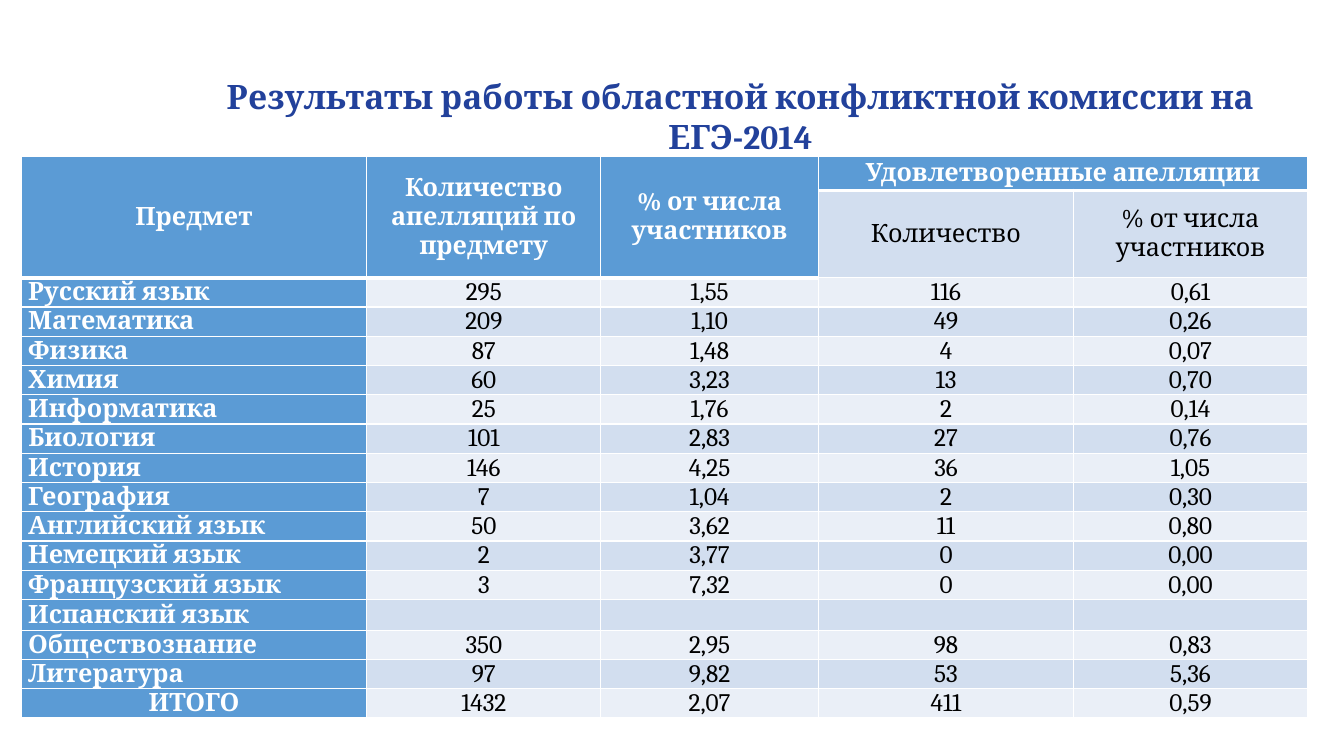
from dataclasses import dataclass

from lxml.etree import SubElement
from pptx import Presentation
from pptx.dml.color import RGBColor
from pptx.enum.text import MSO_ANCHOR, MSO_AUTO_SIZE, PP_ALIGN
from pptx.oxml.ns import qn
from pptx.util import Emu, Inches, Pt

SLIDE_WIDTH, SLIDE_HEIGHT = Inches(13.33), Inches(7.5)
FONT = "Cambria"

WHITE = RGBColor(0xFF, 0xFF, 0xFF)
BLACK = RGBColor(0x00, 0x00, 0x00)
NAVY = RGBColor(0x22, 0x41, 0x9B)
BLUE = RGBColor(0x5B, 0x9B, 0xD5)
BAND_DARK = RGBColor(0xD2, 0xDE, 0xEF)
BAND_LIGHT = RGBColor(0xEA, 0xEF, 0xF7)

# Column widths are percentages of the slide width, row heights of its height
COLUMN_SHARES = (25.73, 17.4, 16.2, 18.98, 17.4)
HEADER_SHARES = (4.53, 7.33)
ROW_SHARE = 3.87


@dataclass(frozen=True)
class CellStyle:
    fill: RGBColor
    color: RGBColor = BLACK
    bold: bool = False
    align: PP_ALIGN = PP_ALIGN.CENTER
    bottom_line: float = 1


@dataclass(frozen=True)
class Subject:
    name: str
    values: tuple[str, ...] = ("", "", "", "")
    align: PP_ALIGN = PP_ALIGN.LEFT


HEADER = CellStyle(BLUE, WHITE, True, bottom_line=3)
SUBHEADER = CellStyle(BAND_DARK)

HEADINGS = (
    ("Предмет", "Количество апелляций по предмету", "% от числа участников",
     "Удовлетворенные апелляции", ""),
    ("", "", "", "Количество", "% от числа участников"),
)
SUBJECTS = (
    Subject("Русский язык", ("295", "1,55", "116", "0,61")),
    Subject("Математика", ("209", "1,10", "49", "0,26")),
    Subject("Физика", ("87", "1,48", "4", "0,07")),
    Subject("Химия", ("60", "3,23", "13", "0,70")),
    Subject("Информатика", ("25", "1,76", "2", "0,14")),
    Subject("Биология", ("101", "2,83", "27", "0,76")),
    Subject("История", ("146", "4,25", "36", "1,05")),
    Subject("География", ("7", "1,04", "2", "0,30")),
    Subject("Английский язык", ("50", "3,62", "11", "0,80")),
    Subject("Немецкий язык", ("2", "3,77", "0", "0,00")),
    Subject("Французский язык", ("3", "7,32", "0", "0,00")),
    Subject("Испанский язык"),
    Subject("Обществознание", ("350", "2,95", "98", "0,83")),
    Subject("Литература", ("97", "9,82", "53", "5,36")),
    Subject("ИТОГО", ("1432", "2,07", "411", "0,59"), PP_ALIGN.CENTER),
)


def across(percent: float) -> Emu:
    return Emu(round(SLIDE_WIDTH * percent / 100))


def down(percent: float) -> Emu:
    return Emu(round(SLIDE_HEIGHT * percent / 100))


def format_text(text_frame, size: float, color: RGBColor, bold: bool, align: PP_ALIGN) -> None:
    for paragraph in text_frame.paragraphs:
        paragraph.alignment = align
        for run in paragraph.runs:
            run.font.name = FONT
            run.font.size = Pt(size)
            run.font.bold = bold
            run.font.color.rgb = color


def add_borders(cell, bottom_line: float) -> None:
    properties = cell._tc.get_or_add_tcPr()
    widths = {"a:lnL": 1, "a:lnR": 1, "a:lnT": 1, "a:lnB": bottom_line}
    for position, (tag, width) in enumerate(widths.items()):
        line = SubElement(properties, qn(tag), w=str(Pt(width)))
        SubElement(SubElement(line, qn("a:solidFill")), qn("a:srgbClr"), val=str(WHITE))
        properties.insert(position, line)


def fill_cell(cell, text: str, style: CellStyle) -> None:
    cell.text_frame.text = text
    cell.vertical_anchor = MSO_ANCHOR.MIDDLE
    cell.margin_left = cell.margin_right = Inches(0.07)
    cell.margin_top = cell.margin_bottom = 0
    cell.fill.solid()
    cell.fill.fore_color.rgb = style.fill
    add_borders(cell, style.bottom_line)
    format_text(cell.text_frame, 18, style.color, style.bold, style.align)


def add_results_table(slide) -> None:
    heights = HEADER_SHARES + (ROW_SHARE,) * len(SUBJECTS)
    table = slide.shapes.add_table(
        len(heights), len(COLUMN_SHARES), across(1.57), down(20.67),
        across(sum(COLUMN_SHARES)), down(sum(heights))).table
    for column, share in zip(table.columns, COLUMN_SHARES):
        column.width = across(share)
    for row, share in zip(table.rows, heights):
        row.height = down(share)

    # Two-level heading
    for row, headings in enumerate(HEADINGS):
        for column, heading in enumerate(headings):
            style = SUBHEADER if row == 1 and column > 2 else HEADER
            fill_cell(table.cell(row, column), heading, style)
    for column in range(3):
        table.cell(0, column).merge(table.cell(1, column))
    table.cell(0, 3).merge(table.cell(0, 4))

    # Subjects in alternating bands
    for row, subject in enumerate(SUBJECTS, len(HEADINGS)):
        name_style = CellStyle(BLUE, WHITE, True, subject.align)
        fill_cell(table.cell(row, 0), subject.name, name_style)
        value_style = CellStyle(BAND_DARK if row % 2 else BAND_LIGHT)
        for column, value in enumerate(subject.values, 1):
            fill_cell(table.cell(row, column), value, value_style)


def add_title(slide) -> None:
    title = slide.shapes.add_textbox(across(11.62), down(12), across(86.93), down(6.67))
    text_frame = title.text_frame
    text_frame.word_wrap = True
    text_frame.auto_size = MSO_AUTO_SIZE.SHAPE_TO_FIT_TEXT
    text_frame.vertical_anchor = MSO_ANCHOR.MIDDLE
    text_frame.text = "Результаты работы областной конфликтной комиссии на ЕГЭ-2014"
    format_text(text_frame, 24, NAVY, True, PP_ALIGN.CENTER)


def main() -> None:
    presentation = Presentation()
    presentation.slide_width, presentation.slide_height = SLIDE_WIDTH, SLIDE_HEIGHT
    slide = presentation.slides.add_slide(presentation.slide_layouts[6])
    add_results_table(slide)
    add_title(slide)
    presentation.save("out.pptx")


if __name__ == "__main__":
    main()
